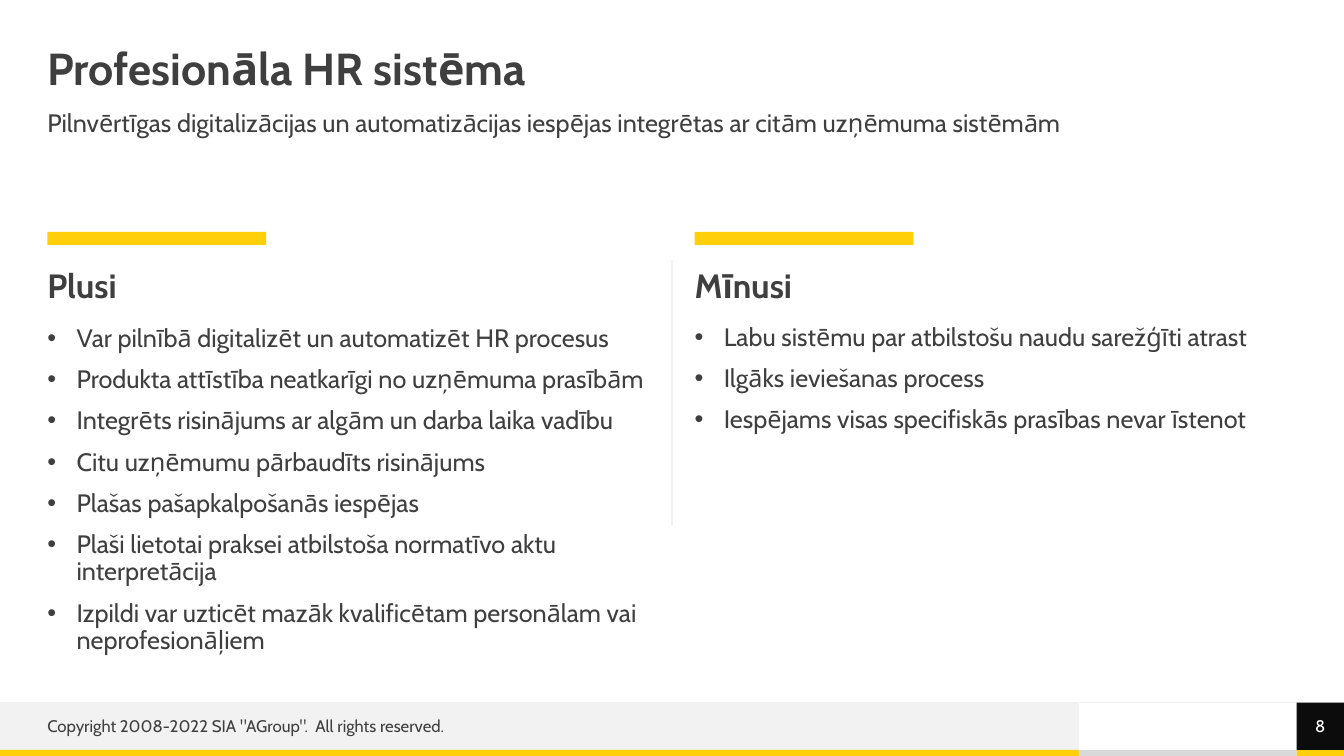
from lxml.etree import SubElement
from pptx import Presentation
from pptx.dml.color import RGBColor
from pptx.enum.shapes import MSO_CONNECTOR, MSO_SHAPE
from pptx.enum.text import MSO_ANCHOR, PP_ALIGN
from pptx.oxml.ns import qn
from pptx.util import Inches, Pt

WIDTH, HEIGHT = Inches(13.33), Inches(7.5)
INK, YELLOW, PALE, GREY = "3F3F3F", "FFD00A", "F2F2F2", "D9D9D9"
BLACK, WHITE = "0C0C0C", "FFFFFF"


def color(hex_code):
    """Turn a hex string into a colour."""
    return RGBColor.from_string(hex_code)


class SlideBuilder:
    """Draw styled elements on a slide, placed in percent of its size."""

    font_name = "Cabin"

    def __init__(self, slide):
        """Keep the current slide."""
        self.slide = slide

    def place(self, x, y, width, height):
        """Convert percentages of the slide into lengths."""
        return [round(share * size / 100) for share, size in
                ((x, WIDTH), (y, HEIGHT), (width, WIDTH), (height, HEIGHT))]

    def bar(self, box, fill):
        """Add a flat filled rectangle."""
        bar = self.slide.shapes.add_shape(MSO_SHAPE.RECTANGLE, *self.place(*box))
        bar.shadow.inherit = False
        bar.fill.solid()
        bar.fill.fore_color.rgb = color(fill)
        bar.line.fill.background()
        return bar

    def rule(self, x1, y1, x2, y2):
        """Add a thin pale line between two points."""
        rule = self.slide.shapes.add_connector(
            MSO_CONNECTOR.STRAIGHT, *self.place(x1, y1, x2, y2))
        rule.line.color.rgb = color(PALE)
        rule.line.width = Pt(0.75)
        SubElement(rule.element.spPr, qn("a:effectLst"))

    def bullet(self, paragraph):
        """Give a paragraph a hanging round bullet."""
        properties = paragraph._p.get_or_add_pPr()
        properties.set("marL", str(Inches(0.29)))
        properties.set("indent", str(-Inches(0.29)))
        tint = SubElement(properties, qn("a:buClr"))
        SubElement(tint, qn("a:srgbClr"), val=INK)
        SubElement(properties, qn("a:buFont"), typeface="Arial")
        SubElement(properties, qn("a:buChar"), char="•")

    def fill_text(self, shape, lines, size, bold=False, ink=INK, spacing=0.9,
                  anchor=MSO_ANCHOR.TOP, align=PP_ALIGN.LEFT, bullets=False):
        """Fill a shape with styled paragraphs."""
        frame = shape.text_frame
        frame.text = "\n".join(lines)
        frame.word_wrap = True
        frame.vertical_anchor = anchor
        frame.margin_left = frame.margin_right = 0
        frame.margin_top = frame.margin_bottom = 0
        for index, paragraph in enumerate(frame.paragraphs):
            if bullets:
                self.bullet(paragraph)
            paragraph.alignment = align
            paragraph.line_spacing = spacing
            if index:
                paragraph.space_before = Pt(10)
            for run in paragraph.runs:
                run.font.name = self.font_name
                run.font.size = Pt(size)
                run.font.bold = bold
                run.font.color.rgb = color(ink)

    def text(self, box, lines, size, **style):
        """Add a text box."""
        self.fill_text(self.slide.shapes.add_textbox(*self.place(*box)),
                       lines, size, **style)


MARGIN, CONTENT = 3.52, 92.96
COLUMN, COLUMN_STEP = 44.86, 48.16
ACCENT = 16.28
FOOTER_TOP, FOOTER_HEIGHT = 92.93, 6.27
STRIP_TOP, STRIP_HEIGHT = 99.2, 0.8
FOOTER_SPLIT, BADGE_LEFT = 80.27, 96.48

PROS_AND_CONS = [
    ("Plusi", 43.07, 43.47, [
        "Var pilnībā digitalizēt un automatizēt HR procesus",
        "Produkta attīstība neatkarīgi no uzņēmuma prasībām",
        "Integrēts risinājums ar algām un darba laika vadību",
        "Citu uzņēmumu pārbaudīts risinājums",
        "Plašas pašapkalpošanās iespējas",
        "Plaši lietotai praksei atbilstoša normatīvo aktu interpretācija",
        "Izpildi var uzticēt mazāk kvalificētam personālam vai neprofesionāļiem",
    ]),
    ("Mīnusi", 42.93, 32, [
        "Labu sistēmu par atbilstošu naudu sarežģīti atrast",
        "Ilgāks ieviešanas process",
        "Iespējams visas specifiskās prasības nevar īstenot",
    ]),
]


def main():
    """Build and save the slide."""
    deck = Presentation()
    deck.slide_width, deck.slide_height = WIDTH, HEIGHT
    page = SlideBuilder(deck.slides.add_slide(deck.slide_layouts[6]))

    page.bar((0, FOOTER_TOP, FOOTER_SPLIT, FOOTER_HEIGHT), PALE)
    for left, right, fill in ((0, FOOTER_SPLIT, YELLOW),
                              (FOOTER_SPLIT, BADGE_LEFT, GREY),
                              (BADGE_LEFT, 100, YELLOW)):
        page.bar((left, STRIP_TOP, right - left, STRIP_HEIGHT), fill)
    page.rule(100, FOOTER_TOP, 0, FOOTER_TOP)

    page.text((MARGIN, 6.27, CONTENT, 6.27), ["Profesionāla HR sistēma"], 32,
              bold=True, anchor=MSO_ANCHOR.MIDDLE)
    page.text((MARGIN, 14.67, CONTENT, 5.2),
              ["Pilnvērtīgas digitalizācijas un automatizācijas iespējas "
               "integrētas ar citām uzņēmuma sistēmām"], 18)

    for index, (heading, top, height, points) in enumerate(PROS_AND_CONS):
        left = MARGIN + index * COLUMN_STEP
        page.bar((left, 30.67, ACCENT, 1.73), YELLOW)
        page.text((left, 35.6, COLUMN, 5.2), [heading], 24, bold=True)
        page.text((left, top, COLUMN, height), points, 18, bullets=True)
    page.rule(50, 34.4, 50, 69.6)

    page.text((MARGIN, 93.87, 46.44, 4.27),
              ['Copyright 2008-2022 SIA "AGroup".  All rights reserved.'], 12,
              spacing=1.0, anchor=MSO_ANCHOR.MIDDLE)
    badge = page.bar((BADGE_LEFT, FOOTER_TOP, MARGIN, FOOTER_HEIGHT), BLACK)
    page.fill_text(badge, ["8"], 12, ink=WHITE, spacing=1.0,
                   anchor=MSO_ANCHOR.MIDDLE, align=PP_ALIGN.CENTER)

    deck.save("out.pptx")


if __name__ == "__main__":
    main()
